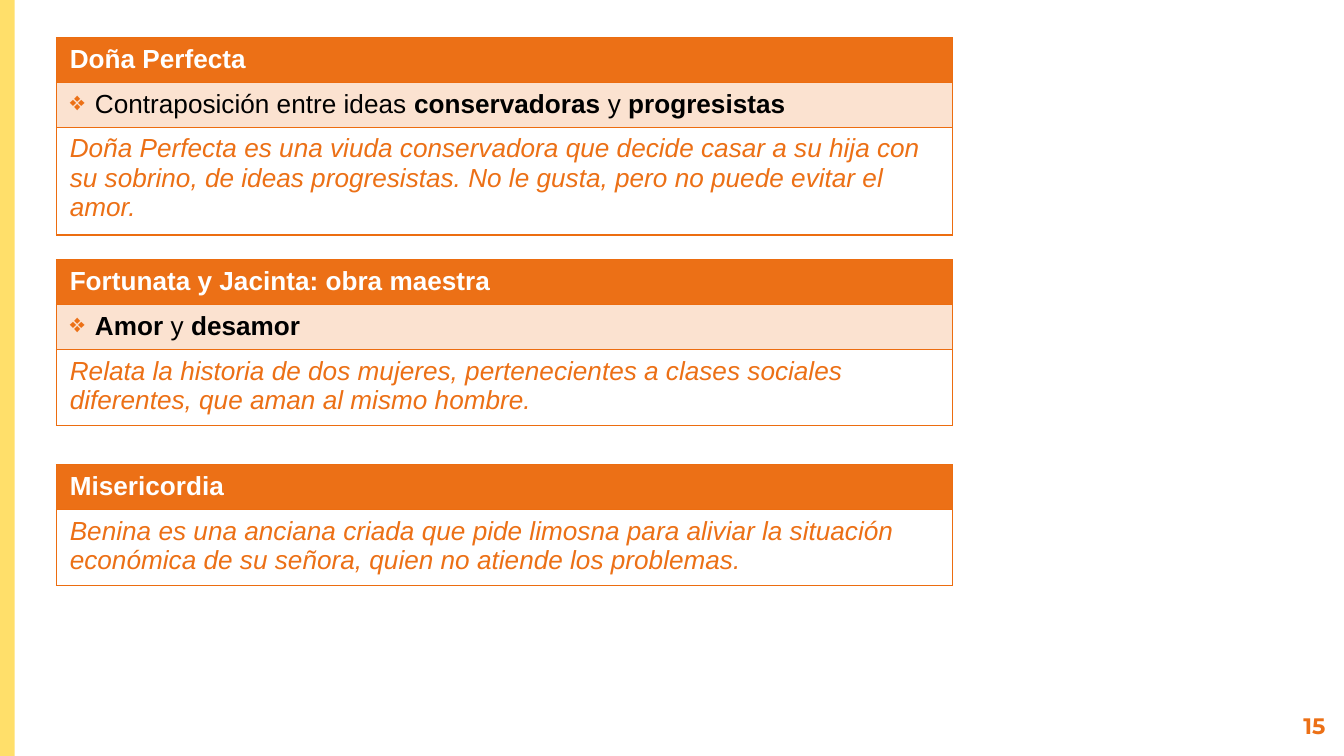
from lxml.etree import SubElement
from pptx import Presentation
from pptx.dml.color import RGBColor
from pptx.enum.shapes import MSO_SHAPE
from pptx.enum.text import PP_ALIGN
from pptx.oxml import parse_xml
from pptx.oxml.ns import nsdecls, qn
from pptx.util import Pt

THEME = {
    "orange": "EC7016", "border": "EC6D10", "peach": "FBE2D0",
    "yellow": "FFDF6A", "white": "FFFFFF", "black": "000000",
    "font": "Arial", "size": 14, "number_font": "Montserrat", "number_size": 12,
}

# Each novel: top in points, title, theme as (words, bold) spans, summary
NOVELS = [
    (20.2, "Doña Perfecta",
     [("Contraposición entre ideas ", False), ("conservadoras", True),
      (" y ", False), ("progresistas", True)],
     "Doña Perfecta es una viuda conservadora que decide casar a su hija con "
     "su sobrino, de ideas progresistas. No le gusta, pero no puede evitar el amor."),
    (139.2, "Fortunata y Jacinta: obra maestra",
     [("Amor", True), (" y ", False), ("desamor", True)],
     "Relata la historia de dos mujeres, pertenecientes a clases sociales "
     "diferentes, que aman al mismo hombre."),
    (249, "Misericordia", [],
     "Benina es una anciana criada que pide limosna para aliviar la situación "
     "económica de su señora, quien no atiende los problemas."),
]
PAGE_NUMBER = "15"

TABLE_LEFT, TABLE_WIDTH = 30.2, 480
LINE_ROW, SUMMARY_ROW = 22.8, 39
BULLET_INDENT = 13.5


def color(name):
    return RGBColor.from_string(THEME[name])


def add_spans(para, spans, tint, italic=False):
    for words, bold in spans:
        span = para.add_run()
        span.text = words
        span.font.name = THEME["font"]
        span.font.size = Pt(THEME["size"])
        span.font.bold = bold
        span.font.italic = italic
        span.font.color.rgb = color(tint)


def add_bullet(para):
    properties = para._p.get_or_add_pPr()
    properties.set("marL", str(Pt(BULLET_INDENT)))
    properties.set("indent", str(-Pt(BULLET_INDENT)))
    bullet_color = SubElement(properties, qn("a:buClr"))
    SubElement(bullet_color, qn("a:srgbClr"), val=THEME["orange"])
    SubElement(properties, qn("a:buChar"), char="❖")


def add_borders(cell):
    properties = cell._tc.get_or_add_tcPr()
    for position, side in enumerate("LRTB"):
        properties.insert(position, parse_xml(
            f'<a:ln{side} {nsdecls("a")} w="{Pt(0.75)}"><a:solidFill>'
            f'<a:srgbClr val="{THEME["border"]}"/></a:solidFill></a:ln{side}>'))


def add_novel(page, top, title, theme_spans, summary):
    # Each row: spans, text colour, fill, height
    rows = [([(title, True)], "white", "orange", LINE_ROW)]
    if theme_spans:
        rows.append((theme_spans, "black", "peach", LINE_ROW))
    rows.append(([(summary, False)], "orange", None, SUMMARY_ROW))

    height = sum(row[-1] for row in rows)
    table = page.shapes.add_table(len(rows), 1, Pt(TABLE_LEFT), Pt(top),
                                  Pt(TABLE_WIDTH), Pt(height)).table
    table.horz_banding = False
    for index, (spans, tint, fill, row_height) in enumerate(rows):
        table.rows[index].height = Pt(row_height)
        cell = table.cell(index, 0)
        if fill:
            cell.fill.solid()
            cell.fill.fore_color.rgb = color(fill)
        else:
            cell.fill.background()
        add_borders(cell)
        para = cell.text_frame.paragraphs[0]
        if spans is theme_spans:
            add_bullet(para)
        add_spans(para, spans, tint, italic=spans is rows[-1][0])


def add_side_band(page, height):
    band = page.shapes.add_shape(MSO_SHAPE.RECTANGLE, 0, 0, Pt(7.9), height)
    band.shadow.inherit = False
    band.fill.solid()
    band.fill.fore_color.rgb = color("yellow")
    band.line.fill.background()


def add_page_number(page):
    box = page.shapes.add_textbox(Pt(674), Pt(374.4), Pt(43.2), Pt(24.5))
    frame = box.text_frame
    frame.word_wrap = True
    frame.margin_left = frame.margin_right = Pt(7.2)
    frame.margin_top = frame.margin_bottom = Pt(7.2)
    frame.text = PAGE_NUMBER
    para = frame.paragraphs[0]
    para.alignment = PP_ALIGN.RIGHT
    font = para.runs[0].font
    font.name = THEME["number_font"]
    font.size = Pt(THEME["number_size"])
    font.bold = True
    font.color.rgb = color("orange")


def main():
    deck = Presentation()
    deck.slide_width, deck.slide_height = Pt(720), Pt(405)
    page = deck.slides.add_slide(deck.slide_layouts[6])
    add_side_band(page, deck.slide_height)
    add_page_number(page)
    for novel in NOVELS:
        add_novel(page, *novel)
    deck.save("out.pptx")


if __name__ == "__main__":
    main()
